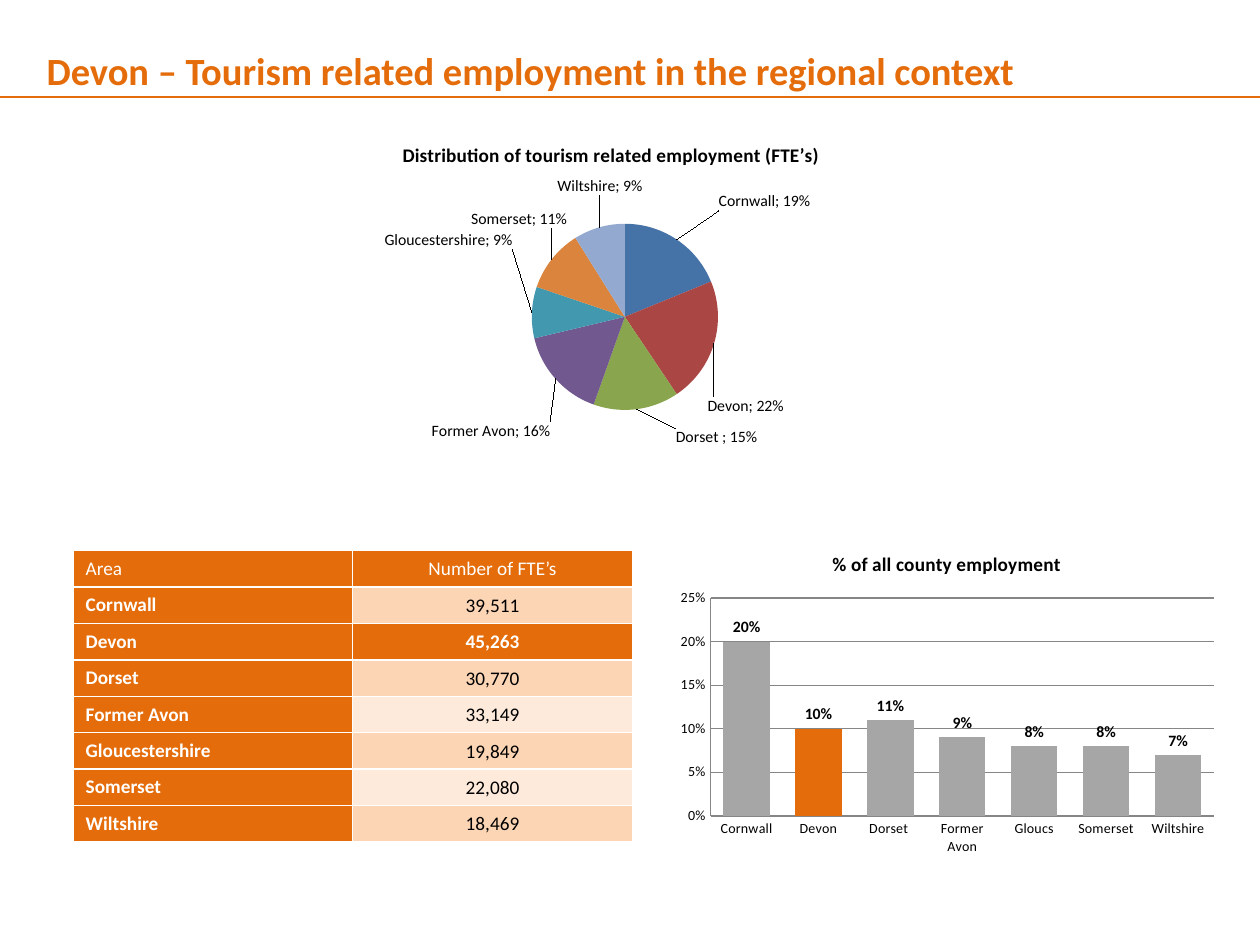
"""Build the slide on tourism employment in Devon and its region."""
from dataclasses import dataclass
from typing import NamedTuple

from lxml.etree import SubElement as Sub
from pptx import Presentation
from pptx.chart.data import CategoryChartData as Data
from pptx.dml.color import RGBColor as Rgb
from pptx.enum.chart import XL_CHART_TYPE as Kind, XL_LABEL_POSITION as Spot
from pptx.enum.chart import XL_TICK_MARK as Tick
from pptx.enum.shapes import MSO_CONNECTOR as Link
from pptx.enum.text import MSO_ANCHOR as Anchor, MSO_AUTO_SIZE as Auto, PP_ALIGN as Align
from pptx.oxml import parse_xml
from pptx.oxml.ns import nsdecls, qn
from pptx.util import Inches, Pt


@dataclass(frozen=True)
class Theme:
    font: str = "Calibri"
    main: str = "E46C0A"
    mid: str = "FCD5B5"
    pale: str = "FDEADA"
    bar: str = "A6A6A6"
    grid: str = "868686"
    ink: str = "000000"
    white: str = "FFFFFF"
    pie: tuple = ("4572A7", "AA4643", "89A54E", "71588F", "4198AF", "DB843D", "93A9CF")
    head: float = 22
    body: float = 11
    label: float = 9
    axis: float = 8


class Box(NamedTuple):
    """Left, top, width and height in cells of a 100 by 75 grid."""
    x: float
    y: float
    w: float
    h: float

    def emu(self) -> list:
        return [Inches(n / 10) for n in self]


class Share(NamedTuple):
    """Plot area in percent of the chart."""
    x: float
    y: float
    w: float
    h: float


class Slice(NamedTuple):
    """A pie part, with its label moved by percents of the chart."""
    name: str
    val: float
    dx: float
    dy: float


class Row(NamedTuple):
    area: str
    jobs: str


class Bar(NamedTuple):
    name: str
    val: float


LOOK = Theme()
SLICES = (
    Slice("Cornwall", 0.19, 5.6, -7),
    Slice("Devon", 0.22, -2, 15.7),
    Slice("Dorset ", 0.15, 5.7, 3.7),
    Slice("Former Avon", 0.16, 0, 11.7),
    Slice("Gloucestershire", 0.09, -1.8, -22.2),
    Slice("Somerset", 0.11, 3.1, -8),
    Slice("Wiltshire", 0.09, 6.7, -7.7),
)
ROWS = (
    Row("Area", "Number of FTE’s"), Row("Cornwall", "39,511"), Row("Devon", "45,263"),
    Row("Dorset", "30,770"), Row("Former Avon", "33,149"), Row("Gloucestershire", "19,849"),
    Row("Somerset", "22,080"), Row("Wiltshire", "18,469"),
)
BARS = (
    Bar("Cornwall", 0.2), Bar("Devon", 0.1), Bar("Dorset ", 0.11), Bar("Former Avon", 0.09),
    Bar("Gloucs", 0.08), Bar("Somerset", 0.08), Bar("Wiltshire", 0.07),
)
LABELS = {"number_format": "0%", "number_format_is_linked": False,
          "show_value": True, "position": Spot.OUTSIDE_END}


def put(item, vals: dict) -> None:
    for key, val in vals.items():
        setattr(item, key, val)


def ink(font, size: float, color: str = LOOK.ink, bold: bool = False) -> None:
    put(font, {"name": LOOK.font, "size": Pt(size), "bold": bold})
    font.color.rgb = Rgb.from_string(color)


def paint(fill, color: str) -> None:
    fill.solid()
    fill.fore_color.rgb = Rgb.from_string(color)


def place(node, modes: dict, parts: dict) -> None:
    base = Sub(node, qn("c:manualLayout"))
    for key, val in modes.items():
        Sub(base, qn(f"c:{key}")).set("val", val)
    for key, val in parts.items():
        Sub(base, qn(f"c:{key}")).set("val", f"{val / 100:.3f}")


def draw_title(slide, text: str, box: Box) -> None:
    shape = slide.shapes.title
    put(shape, dict(zip(("left", "top", "width", "height"), box.emu())))
    frame = shape.text_frame
    put(frame, {"text": text, "word_wrap": True, "auto_size": Auto.NONE,
                "vertical_anchor": Anchor.TOP})
    put(frame.paragraphs[0], {"alignment": Align.LEFT, "line_spacing": 1.2})
    ink(frame.paragraphs[0].runs[0].font, LOOK.head, LOOK.main, True)


def draw_rule(slide, y: float) -> None:
    x, top, end, _ = Box(0, y, 100, 0).emu()
    rule = slide.shapes.add_connector(Link.STRAIGHT, x, top, end, top)
    rule.line.width = Pt(0.75)
    rule.line.color.rgb = Rgb.from_string(LOOK.main)
    Sub(rule._element.spPr, qn("a:effectLst"))


def draw_chart(slide, kind: Kind, title: str, items: tuple, box: Box, plot: Share):
    data = Data(number_format="0%")
    data.categories = [item.name for item in items]
    data.add_series("Series 1", [item.val for item in items])
    chart = slide.shapes.add_chart(kind, *box.emu(), data).chart
    put(chart, {"has_legend": False, "has_title": True})
    ink(chart.font, LOOK.label)
    frame = chart.chart_title.text_frame
    frame.text = title
    ink(frame.paragraphs[0].runs[0].font, LOOK.body, bold=True)
    chart.chart_title.include_in_layout = False
    area = chart._chartSpace.chart.plotArea
    for old in area.findall(qn("c:layout")):
        area.remove(old)
    node = parse_xml(f"<c:layout {nsdecls('c')}/>")
    area.insert(0, node)
    place(node, {"layoutTarget": "inner", "xMode": "edge", "yMode": "edge"}, plot._asdict())
    return chart


def draw_pie(slide, title: str, box: Box, plot: Share) -> None:
    chart = draw_chart(slide, Kind.PIE, title, SLICES, box, plot)
    row = chart.plots[0].series[0]
    put(row.data_labels, LABELS | {"show_category_name": True})
    ink(row.data_labels.font, LOOK.label)
    tags = row.data_labels._element
    mark = parse_xml(f"<c:separator {nsdecls('c')}>; </c:separator>")
    tags.find(qn("c:showLeaderLines")).addprevious(mark)
    flags = {"dLblPos": "outEnd", "showLegendKey": "0", "showVal": "1", "showCatName": "1",
             "showSerName": "0", "showPercent": "0", "showBubbleSize": "0"}
    for i, (item, color) in enumerate(zip(SLICES, LOOK.pie)):
        paint(row.points[i].format.fill, color)
        tag = parse_xml(f"<c:dLbl {nsdecls('c')}/>")
        Sub(tag, qn("c:idx")).set("val", str(i))
        place(Sub(tag, qn("c:layout")), {}, {"x": item.dx, "y": item.dy})
        for key, val in flags.items():
            Sub(tag, qn(f"c:{key}")).set("val", val)
        Sub(tag, qn("c:separator")).text = "; "
        tags.insert(i, tag)


def draw_bars(slide, title: str, box: Box, plot: Share) -> None:
    chart = draw_chart(slide, Kind.COLUMN_CLUSTERED, title, BARS, box, plot)
    put(chart.plots[0], {"gap_width": 55, "vary_by_categories": False})
    row = chart.plots[0].series[0]
    paint(row.format.fill, LOOK.bar)
    paint(row.points[1].format.fill, LOOK.main)
    put(row.data_labels, LABELS)
    ink(row.data_labels.font, LOOK.label, bold=True)
    side = chart.value_axis
    put(side, {"minimum_scale": 0, "maximum_scale": 0.25, "major_unit": 0.05,
               "has_major_gridlines": True})
    put(side.tick_labels, {"number_format": "0%", "number_format_is_linked": False})
    for axis in (side, chart.category_axis):
        put(axis, {"major_tick_mark": Tick.NONE, "minor_tick_mark": Tick.NONE})
        ink(axis.tick_labels.font, LOOK.axis)
    for part in (side, side.major_gridlines, chart.category_axis):
        part.format.line.color.rgb = Rgb.from_string(LOOK.grid)


def draw_table(slide, box: Box) -> None:
    table = slide.shapes.add_table(len(ROWS), 2, *box.emu()).table
    thin = Inches(0.01)
    for i, row in enumerate(ROWS):
        for j, text in enumerate(row):
            cell = table.cell(i, j)
            put(cell, {"text": text, "vertical_anchor": Anchor.MIDDLE})
            if i and j:
                put(cell, {"margin_left": thin, "margin_right": thin,
                           "margin_top": thin, "margin_bottom": 0})
            strong = not (i and j) or row.area == "Devon"
            paint(cell.fill, LOOK.main if strong else (LOOK.pale, LOOK.mid)[i % 2])
            line = cell.text_frame.paragraphs[0]
            line.alignment = (Align.LEFT, Align.CENTER)[j]
            ink(line.runs[0].font, LOOK.body, LOOK.white if strong else LOOK.ink,
                strong and i > 0)


def main() -> None:
    deck = Presentation()
    put(deck, {"slide_width": Inches(10), "slide_height": Inches(7.5)})
    slide = deck.slides.add_slide(deck.slide_layouts[5])
    draw_title(slide, "Devon – Tourism related employment in the regional context",
               Box(2.7, 2.5, 95.3, 5.2))
    draw_rule(slide, 7.7)
    draw_pie(slide, "Distribution of tourism related employment (FTE’s)",
             Box(21.7, 9.9, 53.6, 25.7), Share(16.1, 30.6, 71.9, 57.5))
    draw_table(slide, Box(5.8, 43.7, 44.4, 22.7))
    draw_bars(slide, "% of all county employment",
              Box(53.1, 42.4, 44.1, 26), Share(7.5, 19.5, 90.6, 66.5))
    deck.save("out.pptx")


if __name__ == "__main__":
    main()
